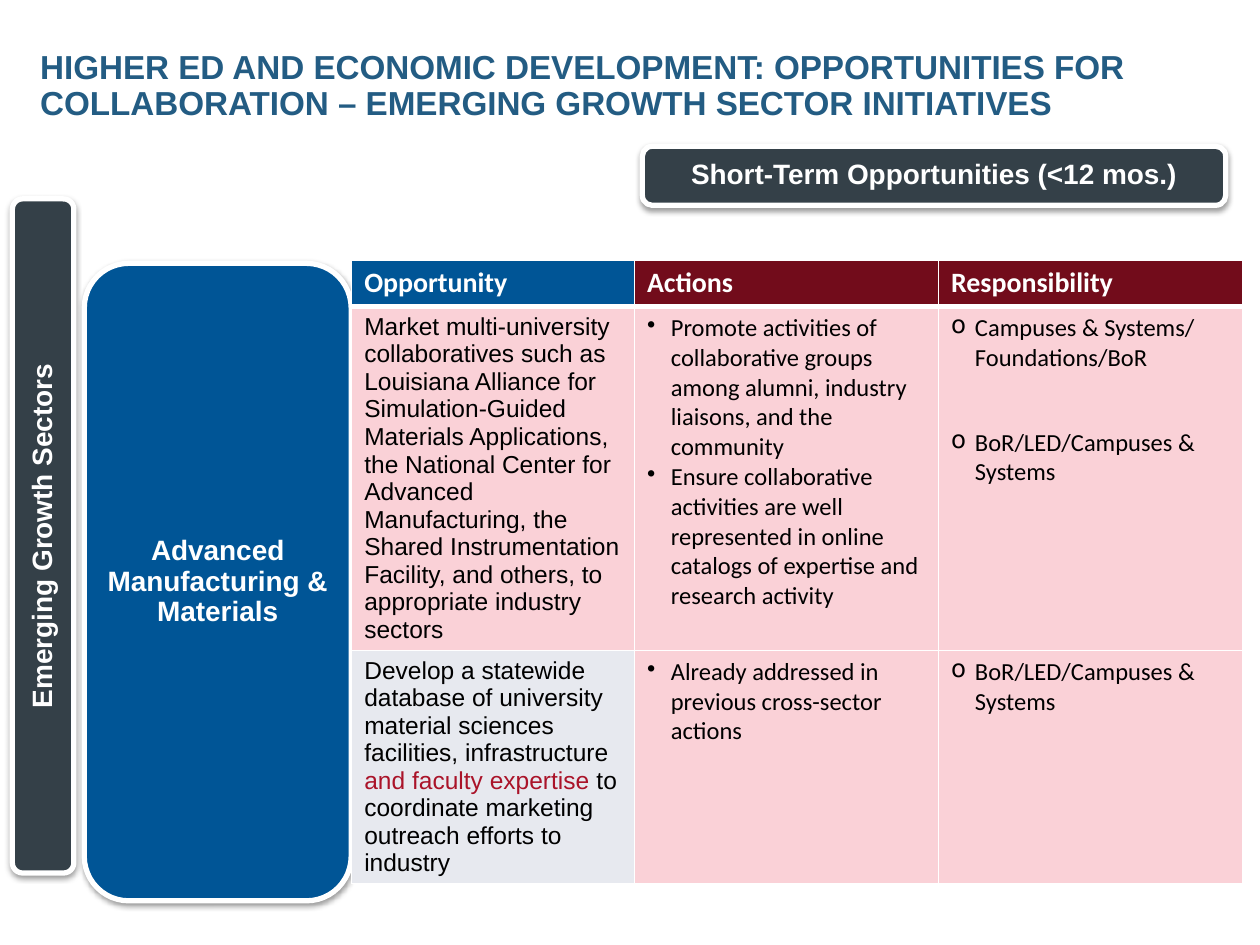
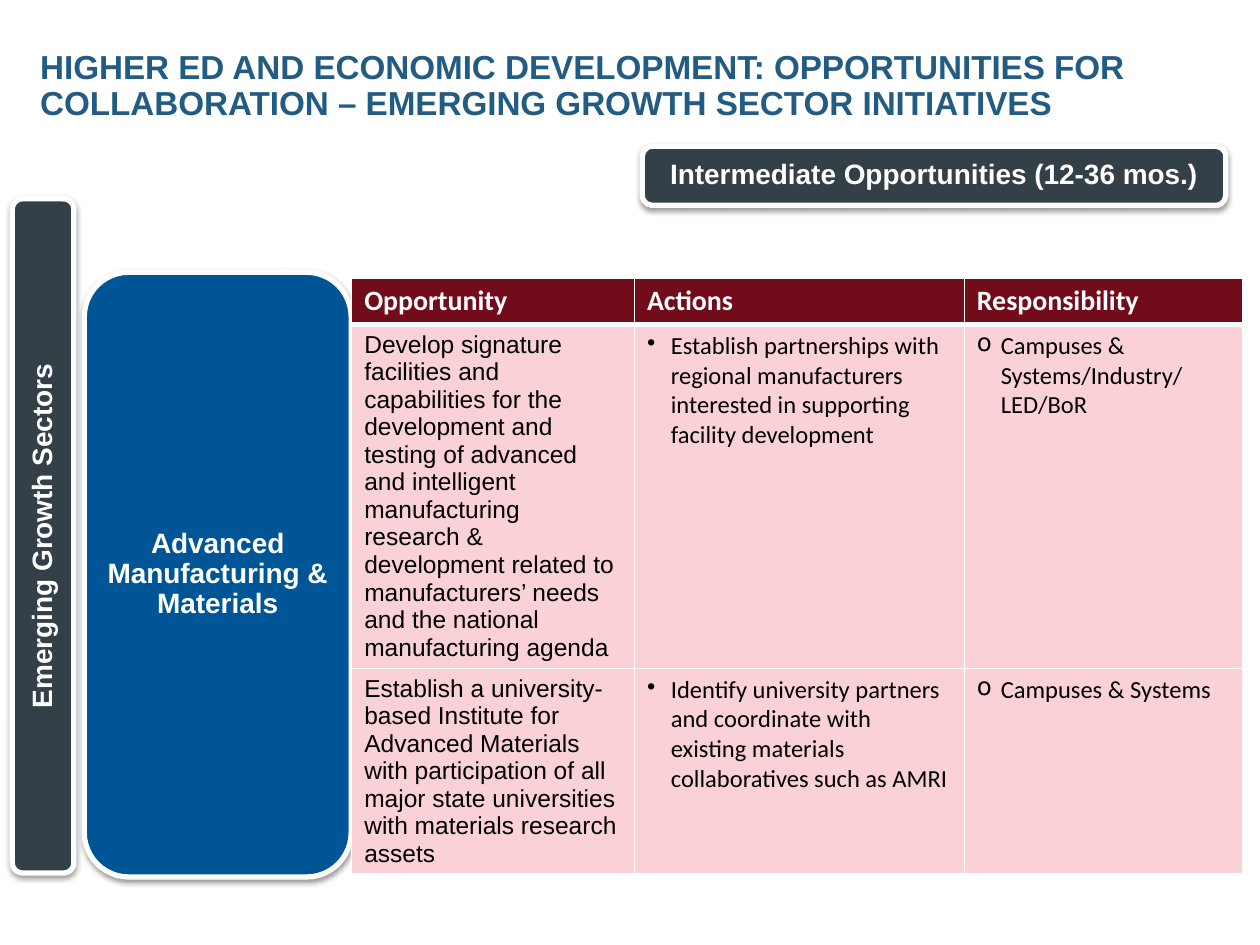
from lxml.etree import SubElement
from pptx import Presentation
from pptx.dml.color import RGBColor
from pptx.enum.shapes import MSO_SHAPE as Shape
from pptx.enum.text import MSO_ANCHOR as Anchor, MSO_AUTO_SIZE as AutoSize, PP_ALIGN as Align
from pptx.oxml.ns import qn
from pptx.util import Cm, Pt

COLORS = {
    "title": "235C83", "slate": "344048", "blue": "005596", "maroon": "720C1B",
    "pink": "FAD1D7", "gray": "E7E9EF", "red": "AA1329", "white": "FFFFFF", "black": "000000",
}
TITLE = ("HIGHER ED AND ECONOMIC DEVELOPMENT: OPPORTUNITIES FOR COLLABORATION – "
         "EMERGING GROWTH SECTOR INITIATIVES")
HEADINGS = ["Opportunity", "Actions", "Responsibility"]
BULLETS = [None, "•", "o"]
INDENT = Cm(0.48)

SLIDES = [
    {
        "term": "Short-Term Opportunities (<12 mos.)",
        "sector_top": 5.31, "sector_height": 12.85,
        "table_top": 5.24, "columns": [5.7, 6.13, 6.13], "rows": [0.93, 6.93, 4.68],
        "fills": [["blue", "maroon", "maroon"], ["pink"] * 3, ["gray", "pink", "pink"]],
        "body": [
            [[[("Market multi-university collaboratives such as Louisiana Alliance for "
                "Simulation-Guided Materials Applications, the National Center for Advanced "
                "Manufacturing, the Shared Instrumentation Facility, and others, to appropriate "
                "industry sectors", "black")]],
             [[("Promote activities of collaborative groups among alumni, industry liaisons, "
                "and the community", "black")],
              [("Ensure collaborative activities are well represented in online catalogs of "
                "expertise and research activity", "black")]],
             [[("Campuses & Systems/ Foundations/BoR", "black")],
              [("BoR/LED/Campuses & Systems", "black")]]],
            [[[("Develop a statewide database of university material sciences facilities, "
                "infrastructure ", "black"),
               ("and faculty expertise ", "red"),
               ("to coordinate marketing outreach efforts to industry", "black")]],
             [[("Already addressed in previous cross-sector actions", "black")]],
             [[("BoR/LED/Campuses & Systems", "black")]]],
        ],
    },
    {
        "term": "Intermediate Opportunities (12-36 mos.)",
        "sector_top": 5.49, "sector_height": 12.19,
        "table_top": 5.6, "columns": [5.7, 6.65, 5.61], "rows": [0.93, 6.93, 4.12],
        "fills": [["maroon"] * 3, ["pink"] * 3, ["pink"] * 3],
        "body": [
            [[[("Develop signature facilities and capabilities for the development and testing "
                "of advanced and intelligent manufacturing research & development related to "
                "manufacturers’ needs and the national manufacturing agenda", "black")]],
             [[("Establish partnerships with regional manufacturers interested in supporting "
                "facility development", "black")]],
             [[("Campuses & Systems/Industry/ LED/BoR", "black")]]],
            [[[("Establish a university-based Institute for Advanced Materials with "
                "participation of all major state universities with materials research assets",
                "black")]],
             [[("Identify university partners and coordinate with existing materials "
                "collaboratives such as AMRI", "black")]],
             [[("Campuses & Systems", "black")]]],
        ],
    },
]


def write(paragraph, text, size=16, font="Arial", color="white", bold=True,
          align=Align.LEFT, spacing=None):
    paragraph.alignment = align
    if spacing:
        paragraph.line_spacing = spacing
    run = paragraph.add_run()
    run.text = text
    run.font.name = font
    run.font.size = Pt(size)
    run.font.bold = bold
    run.font.color.rgb = RGBColor.from_string(COLORS[color])


def add_panel(slide, text, color, left, top, width, height, vertical=False):
    shape = slide.shapes.add_shape(Shape.ROUNDED_RECTANGLE, Cm(left), Cm(top), Cm(width), Cm(height))
    shape.fill.solid()
    shape.fill.fore_color.rgb = RGBColor.from_string(COLORS[color])
    shape.line.color.rgb = RGBColor.from_string(COLORS["white"])
    shape.line.width = Pt(3)
    shape.shadow.inherit = False
    effects = shape._element.spPr.find(qn("a:effectLst"))
    shadow = SubElement(effects, qn("a:outerShdw"), blurRad="40000", dist="20000",
                        dir="5400000", rotWithShape="0")
    shadow_color = SubElement(shadow, qn("a:srgbClr"), val=COLORS["black"])
    SubElement(shadow_color, qn("a:alpha"), val="38000")
    frame = shape.text_frame
    frame.word_wrap = True
    frame.vertical_anchor = Anchor.MIDDLE
    frame.margin_left = frame.margin_right = Cm(0.18)
    frame.margin_top = frame.margin_bottom = Cm(0.08)
    if vertical:
        frame._txBody.bodyPr.set("vert", "vert270")
    write(frame.paragraphs[0], text, align=Align.CENTER, spacing=0.9)


presentation = Presentation()
presentation.slide_width = Cm(25.4)
presentation.slide_height = Cm(19.05)

for content in SLIDES:
    slide = presentation.slides.add_slide(presentation.slide_layouts[5])
    title = slide.shapes.title
    title.left, title.top, title.width, title.height = Cm(0.81), Cm(0.66), Cm(22.25), Cm(2.18)
    frame = title.text_frame
    frame.word_wrap = True
    frame.auto_size = AutoSize.NONE
    frame.vertical_anchor = Anchor.MIDDLE
    frame.margin_left = frame.margin_right = frame.margin_top = frame.margin_bottom = 0
    write(frame.paragraphs[0], TITLE, size=19, color="title", spacing=0.9)

    add_panel(slide, content["term"], "slate", 12.95, 2.95, 11.76, 1.19)
    add_panel(slide, "Advanced Manufacturing & Materials", "blue",
              1.7, content["sector_top"], 5.38, content["sector_height"])
    add_panel(slide, "Emerging Growth Sectors", "slate", 0.25, 4.01, 1.24, 13.59, vertical=True)

    columns, rows = content["columns"], content["rows"]
    table = slide.shapes.add_table(len(rows), len(columns), Cm(7.09), Cm(content["table_top"]),
                                   Cm(sum(columns)), Cm(sum(rows))).table
    for column, width in zip(table.columns, columns):
        column.width = Cm(width)
    for row, height in zip(table.rows, rows):
        row.height = Cm(height)

    for row_index, fills in enumerate(content["fills"]):
        for column_index, fill in enumerate(fills):
            cell = table.cell(row_index, column_index)
            properties = cell._tc.get_or_add_tcPr()
            thick_side = {0: "lnB", 1: "lnT"}.get(row_index)
            for side in ("lnL", "lnR", "lnT", "lnB"):
                border = SubElement(properties, qn(f"a:{side}"),
                                    w=str(Pt(3 if side == thick_side else 1)))
                border_fill = SubElement(border, qn("a:solidFill"))
                SubElement(border_fill, qn("a:srgbClr"), val=COLORS["white"])
            cell.fill.solid()
            cell.fill.fore_color.rgb = RGBColor.from_string(COLORS[fill])

            if row_index == 0:
                write(cell.text_frame.paragraphs[0], HEADINGS[column_index], font="Calibri")
                continue
            bullet = BULLETS[column_index]
            for index, runs in enumerate(content["body"][row_index - 1][column_index]):
                frame = cell.text_frame
                paragraph = frame.add_paragraph() if index else frame.paragraphs[0]
                if bullet:
                    paragraph_properties = paragraph._p.get_or_add_pPr()
                    paragraph_properties.set("marL", str(INDENT))
                    paragraph_properties.set("indent", str(-INDENT))
                    SubElement(paragraph_properties, qn("a:buChar"), char=bullet)
                else:
                    paragraph.space_after = Pt(6)
                if index and bullet == "o":
                    paragraph.space_before = Pt(31.5)
                for text, color in runs:
                    write(paragraph, text, size=14, font="Calibri" if bullet else "Arial",
                          color=color, bold=False)

presentation.save("out.pptx")
